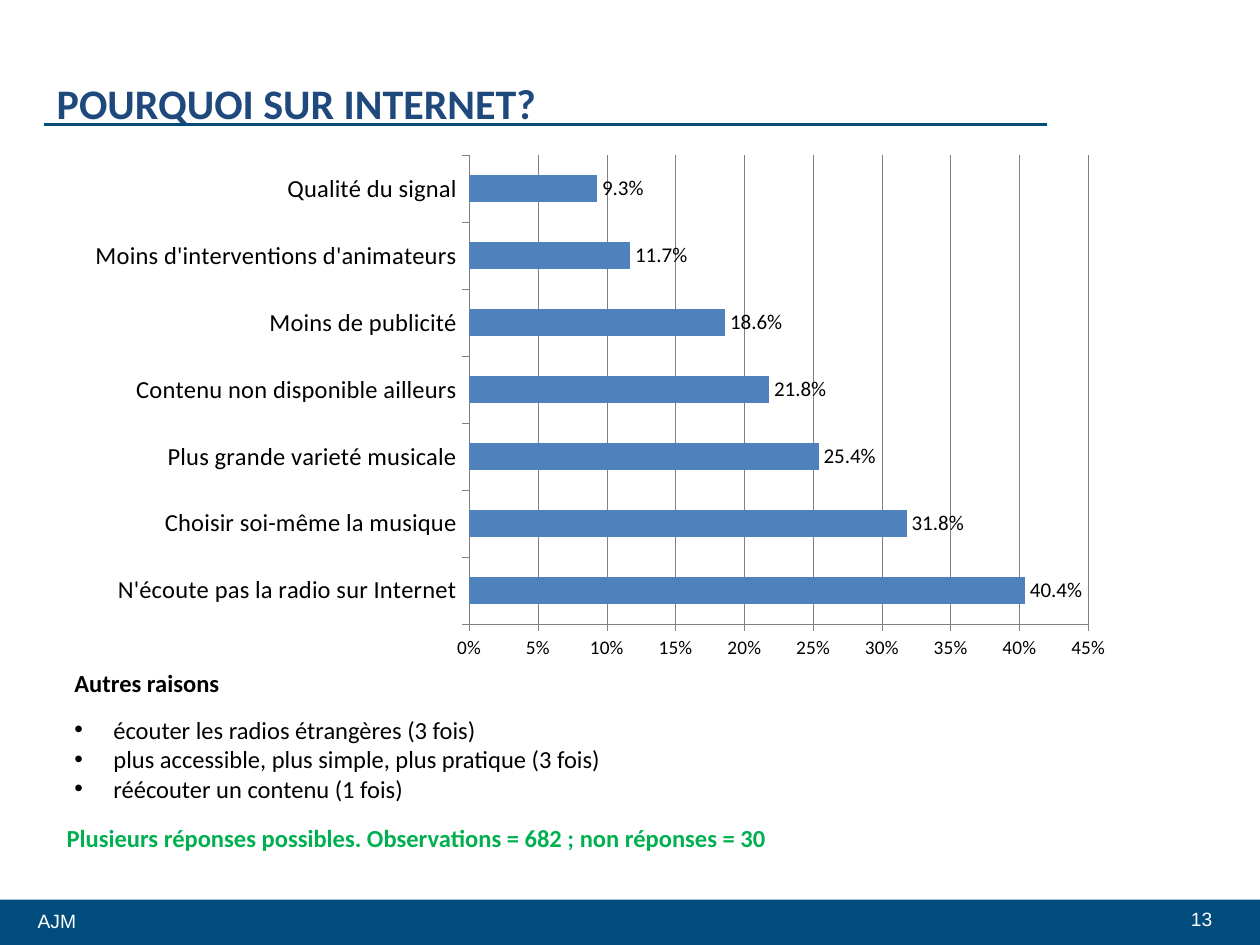
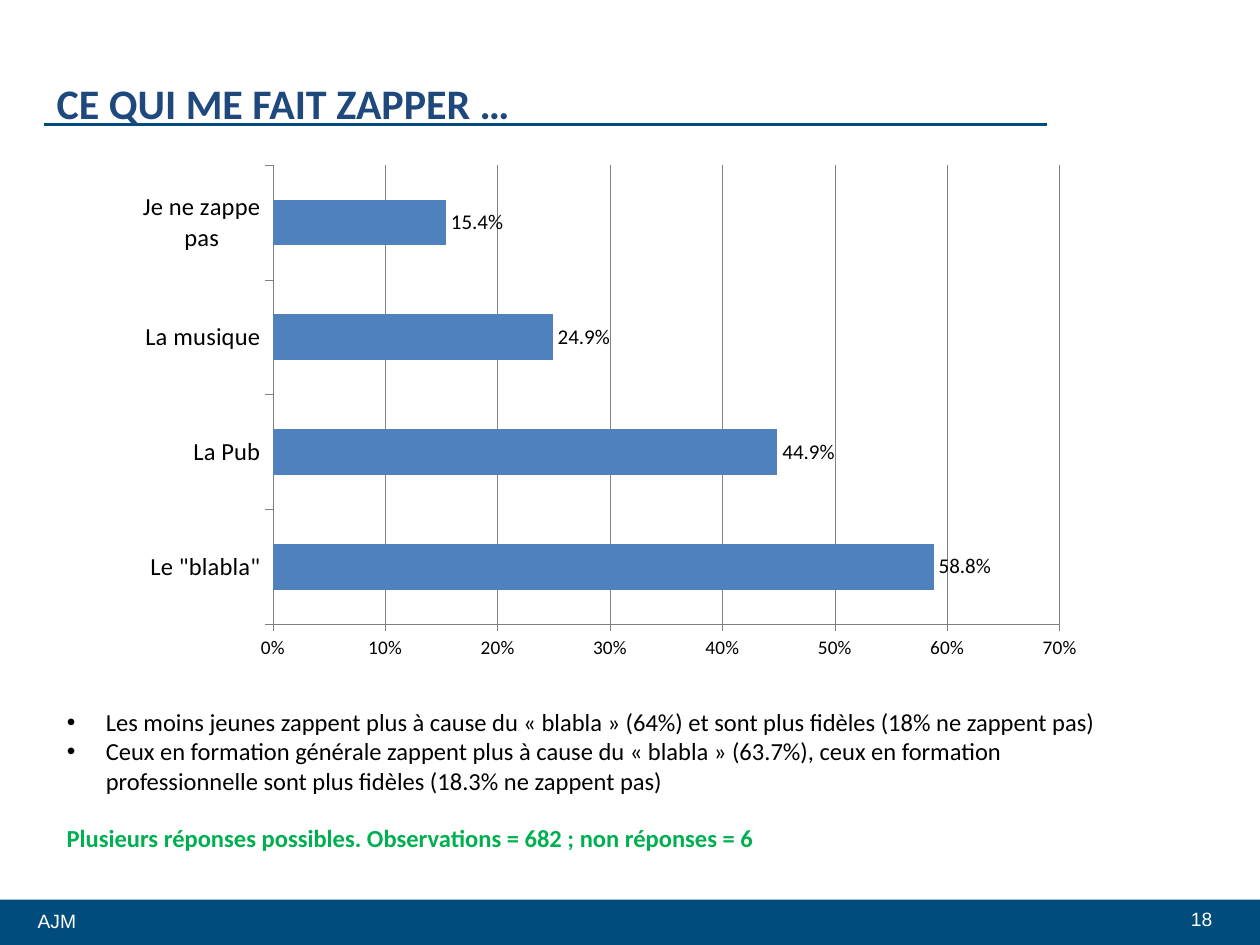
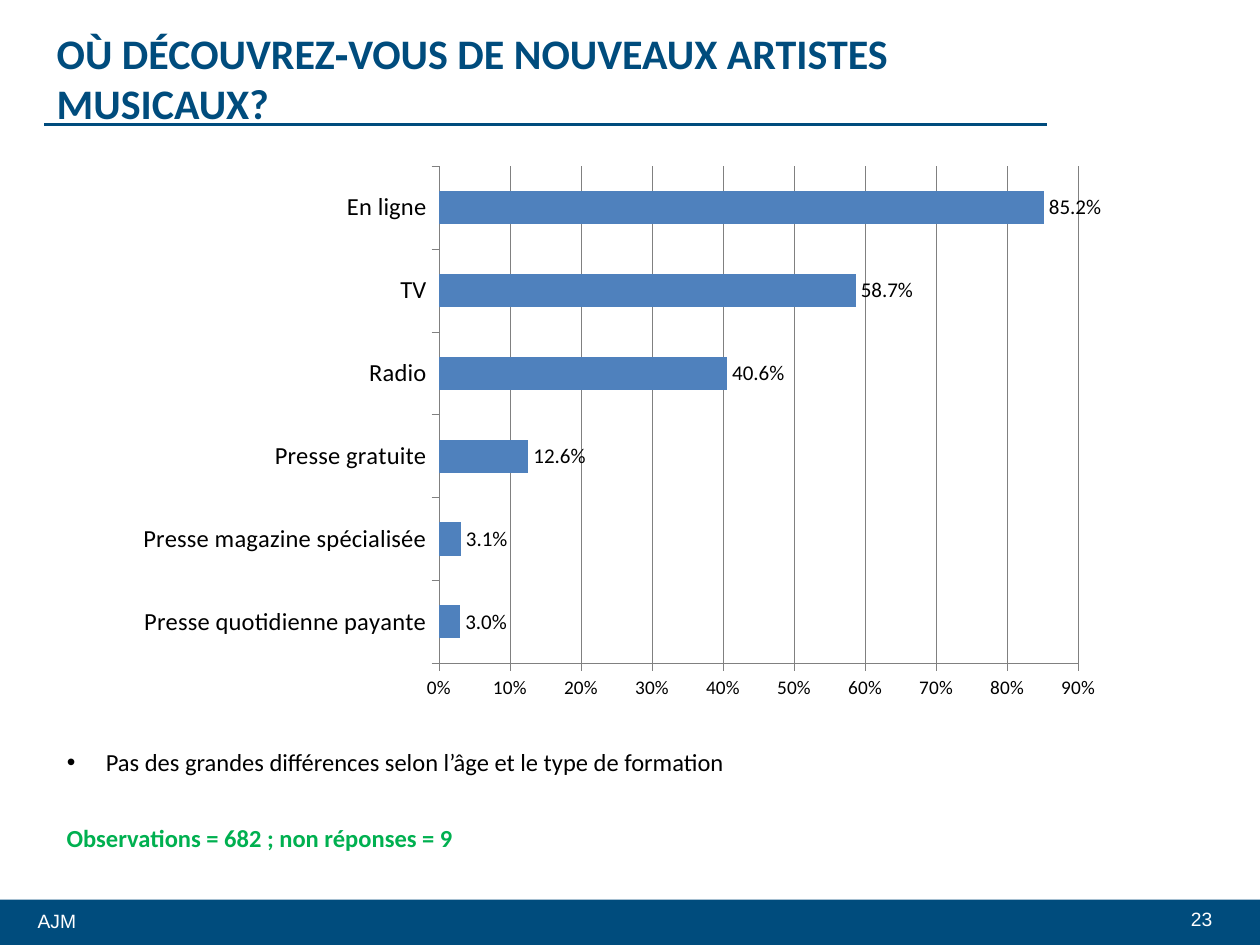
"""Build three survey result slides, each with a bar chart, remarks and a sample note."""
from dataclasses import dataclass

import pptx
import pptx.chart.data
import pptx.dml.color
import pptx.enum.chart
import pptx.enum.shapes
import pptx.enum.text
import pptx.util
from lxml import etree
from pptx.oxml.ns import qn


@dataclass(frozen=True)
class Theme:
    navy: str = "004C7D"
    blue: str = "1F497D"
    bar: str = "4F81BD"
    green: str = "00B050"
    grey: str = "808080"
    black: str = "000000"
    white: str = "FFFFFF"
    body_font: str = "Calibri"
    footer_font: str = "Arial"
    title_size: int = 24
    text_size: int = 14
    label_size: int = 12
    small_size: int = 11


theme = Theme()
color = pptx.dml.color.RGBColor.from_string
Pt = pptx.util.Pt
PP_ALIGN = pptx.enum.text.PP_ALIGN

presentation = pptx.Presentation()
presentation.slide_width = pptx.util.Inches(10)
presentation.slide_height = pptx.util.Inches(7.5)
column = presentation.slide_width / 100
row = presentation.slide_height / 75


def grid(left, top, width, height):
    """Turn grid columns and rows into slide lengths."""
    return [round(left * column), round(top * row), round(width * column), round(height * row)]


def style_font(font, size, ink=theme.black, bold=False, name=theme.body_font):
    """Apply one text style to a font."""
    font.name, font.size, font.bold = name, Pt(size), bold
    font.color.rgb = color(ink)


slides = [
    {
        "number": "13",
        "title": "POURQUOI SUR INTERNET?",
        "title_top": 6.4,
        "title_color": theme.blue,
        "chart_box": (5.9, 11.5, 83.5, 41.7),
        "scale": (0.45, 0.05),
        "values": {
            "N'écoute pas la radio sur Internet": 0.404,
            "Choisir soi-même la musique": 0.318,
            "Plus grande varieté musicale": 0.254,
            "Contenu non disponible ailleurs": 0.218,
            "Moins de publicité": 0.186,
            "Moins d'interventions d'animateurs": 0.117,
            "Qualité du signal": 0.093,
        },
        "remarks_box": (4.9, 52.5, 45, 12.1),
        "heading": "Autres raisons",
        "remarks": [
            "écouter les radios étrangères (3 fois)",
            "plus accessible, plus simple, plus pratique (3 fois)",
            "réécouter un contenu (1 fois)",
        ],
        "note": "Plusieurs réponses possibles. Observations = 682 ; non réponses = 30",
    },
    {
        "number": "18",
        "title": "CE QUI ME FAIT ZAPPER …",
        "title_top": 6.4,
        "title_color": theme.blue,
        "chart_box": (9.8, 12.3, 77.2, 40.9),
        "scale": (0.7, 0.1),
        "values": {
            'Le "blabla"': 0.588,
            "La Pub": 0.449,
            "La musique": 0.249,
            "Je ne zappe pas": 0.154,
        },
        "remarks_box": (4.3, 55.6, 85.8, 8.1),
        "heading": None,
        "remarks": [
            "Les moins jeunes zappent plus à cause du « blabla » (64%) "
            "et sont plus fidèles (18% ne zappent pas)",
            "Ceux en formation générale zappent plus à cause du « blabla » (63.7%), "
            "ceux en formation professionnelle sont plus fidèles (18.3% ne zappent pas)",
        ],
        "note": "Plusieurs réponses possibles. Observations = 682 ; non réponses = 6",
    },
    {
        "number": "23",
        "title": "OÙ DÉCOUVREZ‐VOUS DE NOUVEAUX ARTISTES MUSICAUX?",
        "title_top": 4.4,
        "title_color": theme.navy,
        "chart_box": (9.8, 12.3, 78.7, 44.1),
        "scale": (0.9, 0.1),
        "values": {
            "Presse quotidienne payante": 0.03,
            "Presse magazine spécialisée": 0.031,
            "Presse gratuite": 0.126,
            "Radio": 0.406,
            "TV": 0.587,
            "En ligne": 0.852,
        },
        "remarks_box": (4.3, 58.8, 55, 3.4),
        "heading": None,
        "remarks": ["Pas des grandes différences selon l’âge et le type de formation"],
        "note": "Observations = 682 ; non réponses = 9",
    },
]

for content in slides:
    slide = presentation.slides.add_slide(presentation.slide_layouts[1])
    title, remarks = slide.placeholders

    band = slide.shapes.add_shape(pptx.enum.shapes.MSO_SHAPE.RECTANGLE, *grid(0, 71.4, 100, 3.6))
    band.shadow.inherit = False
    band.fill.solid()
    band.fill.fore_color.rgb = color(theme.navy)
    band.line.fill.background()

    left, top, width, height = grid(3.5, 9.9, 79.6, 0)
    rule = slide.shapes.add_connector(
        pptx.enum.shapes.MSO_CONNECTOR.STRAIGHT, left, top, left + width, top)
    rule.line.color.rgb = color(theme.navy)
    rule.line.width = Pt(2)
    etree.SubElement(rule._element.spPr, qn("a:effectLst"))

    title.left, title.top, title.width, title.height = grid(3.5, content["title_top"], 81.1, 3.5)
    title.text_frame.text = content["title"]
    title.text_frame.auto_size = pptx.enum.text.MSO_AUTO_SIZE.NONE
    title.text_frame.vertical_anchor = pptx.enum.text.MSO_ANCHOR.MIDDLE
    paragraph = title.text_frame.paragraphs[0]
    paragraph.alignment = PP_ALIGN.LEFT
    style_font(paragraph.runs[0].font, theme.title_size, content["title_color"], True)

    remarks.left, remarks.top, remarks.width, remarks.height = grid(*content["remarks_box"])
    heading = [content["heading"]] if content["heading"] else []
    remarks.text_frame.text = "\n".join(heading + content["remarks"])
    remarks.text_frame.auto_size = pptx.enum.text.MSO_AUTO_SIZE.NONE
    for index, paragraph in enumerate(remarks.text_frame.paragraphs):
        is_heading = index < len(heading)
        indent = 0 if is_heading else round(3.1 * column)
        properties = paragraph._p.get_or_add_pPr()
        properties.set("marL", str(indent))
        properties.set("indent", str(-indent))
        if is_heading:
            etree.SubElement(properties, qn("a:buNone"))
        paragraph.space_before = Pt(10 if heading and index == 1 else 0)
        style_font(paragraph.runs[0].font, theme.text_size, bold=is_heading)

    labels = [
        ("AJM", (2, 71.7, 31.5, 2.9), PP_ALIGN.LEFT,
         (theme.small_size, theme.white, False, theme.footer_font)),
        (content["number"], (65.7, 71.5, 31.5, 2.9), PP_ALIGN.RIGHT,
         (theme.small_size, theme.white, False, theme.footer_font)),
        (content["note"], (4.3, 64.8, 60, 3.4), PP_ALIGN.LEFT,
         (theme.text_size, theme.green, True)),
    ]
    for text, box, alignment, style in labels:
        label = slide.shapes.add_textbox(*grid(*box))
        label.text_frame.word_wrap = True
        label.text_frame.text = text
        paragraph = label.text_frame.paragraphs[0]
        paragraph.alignment = alignment
        style_font(paragraph.runs[0].font, *style)

    chart_data = pptx.chart.data.CategoryChartData(number_format="0.0%")
    chart_data.categories = list(content["values"])
    chart_data.add_series("Series 1", content["values"].values())
    chart = slide.shapes.add_chart(
        pptx.enum.chart.XL_CHART_TYPE.BAR_CLUSTERED, *grid(*content["chart_box"]), chart_data).chart
    chart.has_legend = False
    chart.has_title = False
    style_font(chart.font, 10)

    plot = chart.plots[0]
    plot.gap_width = 150
    plot.vary_by_categories = False
    plot.series[0].format.fill.solid()
    plot.series[0].format.fill.fore_color.rgb = color(theme.bar)
    plot.has_data_labels = True
    data_labels = plot.data_labels
    data_labels.show_value = True
    data_labels.number_format = "0.0%"
    data_labels.number_format_is_linked = False
    data_labels.position = pptx.enum.chart.XL_LABEL_POSITION.OUTSIDE_END
    style_font(data_labels.font, theme.label_size)

    value_axis = chart.value_axis
    value_axis.minimum_scale = 0
    value_axis.maximum_scale, value_axis.major_unit = content["scale"]
    value_axis.tick_labels.number_format = "0%"
    value_axis.tick_labels.number_format_is_linked = False
    value_axis.has_major_gridlines = True
    for axis, size in ((chart.category_axis, theme.text_size), (value_axis, theme.small_size)):
        axis.major_tick_mark = pptx.enum.chart.XL_TICK_MARK.OUTSIDE
        style_font(axis.tick_labels.font, size)
    for part in (chart.category_axis, value_axis, value_axis.major_gridlines):
        part.format.line.color.rgb = color(theme.grey)
        part.format.line.width = Pt(0.25)

presentation.save("out.pptx")
